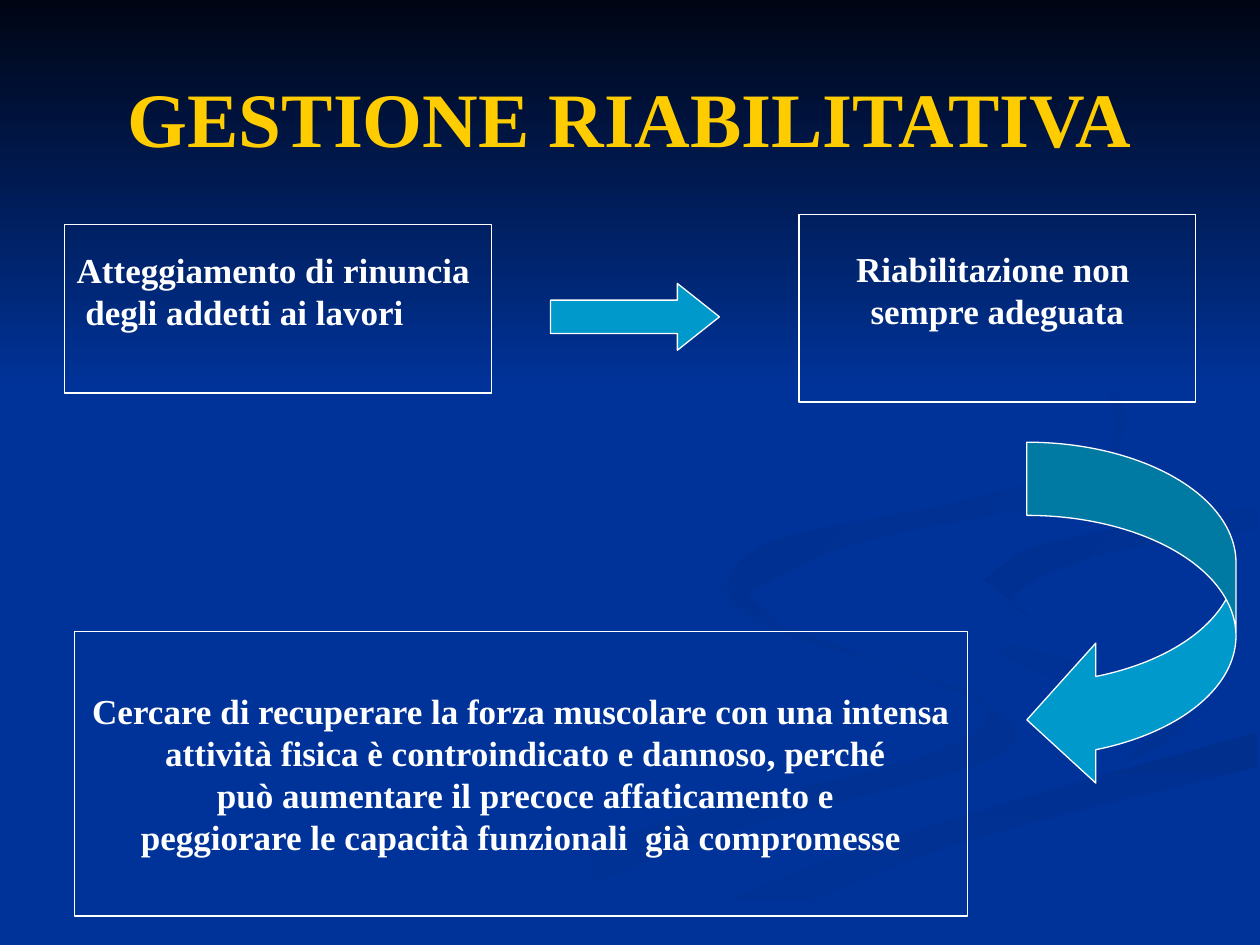
from dataclasses import dataclass

from pptx import Presentation
from pptx.dml.color import RGBColor as RGB
from pptx.enum.shapes import MSO_SHAPE as SHAPE
from pptx.enum.text import MSO_ANCHOR as ANCHOR, PP_ALIGN as ALIGN
from pptx.util import Inches, Pt


@dataclass(frozen=True)
class Theme:
    font: str = "Times New Roman"
    blue: str = "003399"
    shade: str = "002F8E"
    soft_shade: str = "003193"
    night: str = "000514"
    gold: str = "FFCC00"
    white: str = "FFFFFF"
    arrow: str = "0099CC"
    title_size: int = 44
    body_size: int = 20
    line_width: float = 0.75


T = Theme()
CURVE_STEPS = 6

# Start colour, end colour, angle, outward edge, returning edge (inches)
RIBBONS = [
    (T.blue, T.soft_shade, 0,
     [(5.7, 4.68), (6.11, 4.99), (7.41, 5.39), (7.85, 5.66), (7.27, 6.02), (4.99, 6.61), (3, 7.49)],
     [(3.61, 7.49), (5.64, 6.65), (7.8, 6.05), (7.95, 5.67), (6.82, 5.19), (5.94, 4.85), (5.75, 4.59)]),
    (T.blue, T.soft_shade, 45,
     [(7.24, 4.64), (7.58, 4.98), (8.7, 5.3), (9.43, 5.7), (8.94, 6.05)],
     [(9.17, 5.76), (8.15, 5.3), (7.39, 4.94), (7.24, 4.64)]),
    (T.shade, T.blue, 90,
     [(5.03, 7.49), (6.3, 6.93), (7.97, 6.38), (9.98, 5.81)],
     [(9.98, 6.09), (7.52, 6.72), (5.71, 7.49)]),
    (T.shade, T.blue, 45,
     [(7.81, 4.6), (8.21, 4.34), (8.98, 4.18), (9.98, 4.02)],
     [(9.98, 4.2), (8.78, 4.39), (8.05, 4.72), (8.26, 4.96)]),
    (T.shade, T.blue, 45,
     [(8.8, 3.07), (8.76, 3.6), (7.63, 3.98), (6.15, 4.29), (5.78, 4.68), (6.22, 5)],
     [(5.93, 4.7), (6.83, 4.3), (8.55, 3.91), (8.93, 3.35), (8.8, 3.07)]),
]


def smooth(points):
    """Points along a Catmull-Rom curve through the given points."""
    padded = [points[0], *points, points[-1]]
    curve = []
    for a, b, c, d in zip(padded, padded[1:], padded[2:], padded[3:]):
        for step in range(CURVE_STEPS):
            t = step / CURVE_STEPS
            curve.append(tuple(
                q + t * (r - p + t * (2 * p - 5 * q + 4 * r - u + t * (3 * q - p - 3 * r + u))) / 2
                for p, q, r, u in zip(a, b, c, d)))
    return curve + [points[-1]]


def paint_gradient(shape, start, end, angle):
    """Fill from start to end along a clockwise angle, without an outline."""
    shape.shadow.inherit = False
    shape.line.fill.background()
    shape.fill.gradient()
    shape.fill.gradient_angle = (360 - angle) % 360
    for stop, color in zip(shape.fill.gradient_stops, (start, end)):
        stop.color.rgb = RGB.from_string(color)


def add_background(s, width, height):
    fill = s.background.fill
    fill.solid()
    fill.fore_color.rgb = RGB.from_string(T.blue)
    for start, end, angle, outward, returning in RIBBONS:
        points = [(Inches(x), Inches(y)) for x, y in smooth(outward) + smooth(returning)]
        builder = s.shapes.build_freeform(*points[0])
        builder.add_line_segments(points[1:], close=True)
        paint_gradient(builder.convert_to_shape(), start, end, angle)
    sky = s.shapes.add_shape(SHAPE.RECTANGLE, 0, 0, width, height)
    paint_gradient(sky, T.night, T.blue, 90)


def write_text(tf, lines, size, color, align):
    tf.vertical_anchor = ANCHOR.MIDDLE
    tf.text = "\n".join(lines)
    for p in tf.paragraphs:
        p.alignment = align
        for r in p.runs:
            r.font.name = T.font
            r.font.size = Pt(size)
            r.font.bold = True
            r.font.color.rgb = RGB.from_string(color)


def add_title(s, box, text):
    tf = s.shapes.add_textbox(*map(Inches, box)).text_frame
    tf.word_wrap = True
    write_text(tf, [text], T.title_size, T.gold, ALIGN.CENTER)


def add_outlined(s, kind, box):
    sp = s.shapes.add_shape(kind, *map(Inches, box))
    sp.shadow.inherit = False
    sp.line.color.rgb = RGB.from_string(T.white)
    sp.line.width = Pt(T.line_width)
    return sp


def add_statement(s, box, lines, align=ALIGN.CENTER, bottom=0.05):
    """Framed text; a larger bottom inset lifts the lines above the middle."""
    sp = add_outlined(s, SHAPE.RECTANGLE, box)
    sp.fill.background()
    tf = sp.text_frame
    tf.word_wrap = False
    tf.margin_bottom = Inches(bottom)
    write_text(tf, lines, T.body_size, T.white, align)


def add_arrow(s, kind, box, adjustments):
    sp = add_outlined(s, kind, box)
    sp.fill.solid()
    sp.fill.fore_color.rgb = RGB.from_string(T.arrow)
    for i, value in enumerate(adjustments):
        sp.adjustments[i] = value


def main():
    prs = Presentation()
    prs.slide_width, prs.slide_height = Inches(10), Inches(7.5)
    s = prs.slides.add_slide(prs.slide_layouts[6])
    add_background(s, prs.slide_width, Inches(3.08))
    add_title(s, (0.5, 0.3, 9, 1.25), "GESTIONE RIABILITATIVA")
    add_statement(s, (0.51, 1.78, 3.39, 1.34),
                  ["Atteggiamento di rinuncia", " degli addetti ai lavori"],
                  align=ALIGN.LEFT, bottom=0.34)
    add_statement(s, (6.34, 1.7, 3.15, 1.49),
                  ["Riabilitazione non ", "sempre adeguata"], bottom=0.34)
    add_arrow(s, SHAPE.RIGHT_ARROW, (4.37, 2.25, 1.34, 0.53), (0.5, 0.63))
    add_statement(s, (0.59, 5.01, 7.09, 2.26), [
        "Cercare di recuperare la forza muscolare con una intensa",
        " attività fisica è controindicato e dannoso, perché",
        " può aumentare il precoce affaticamento e",
        "peggiorare le capacità funzionali  già compromesse"])
    add_arrow(s, SHAPE.CURVED_LEFT_ARROW, (8.15, 3.51, 1.66, 2.76), (0.35, 0.67, 0.33))
    prs.save("out.pptx")


if __name__ == "__main__":
    main()
